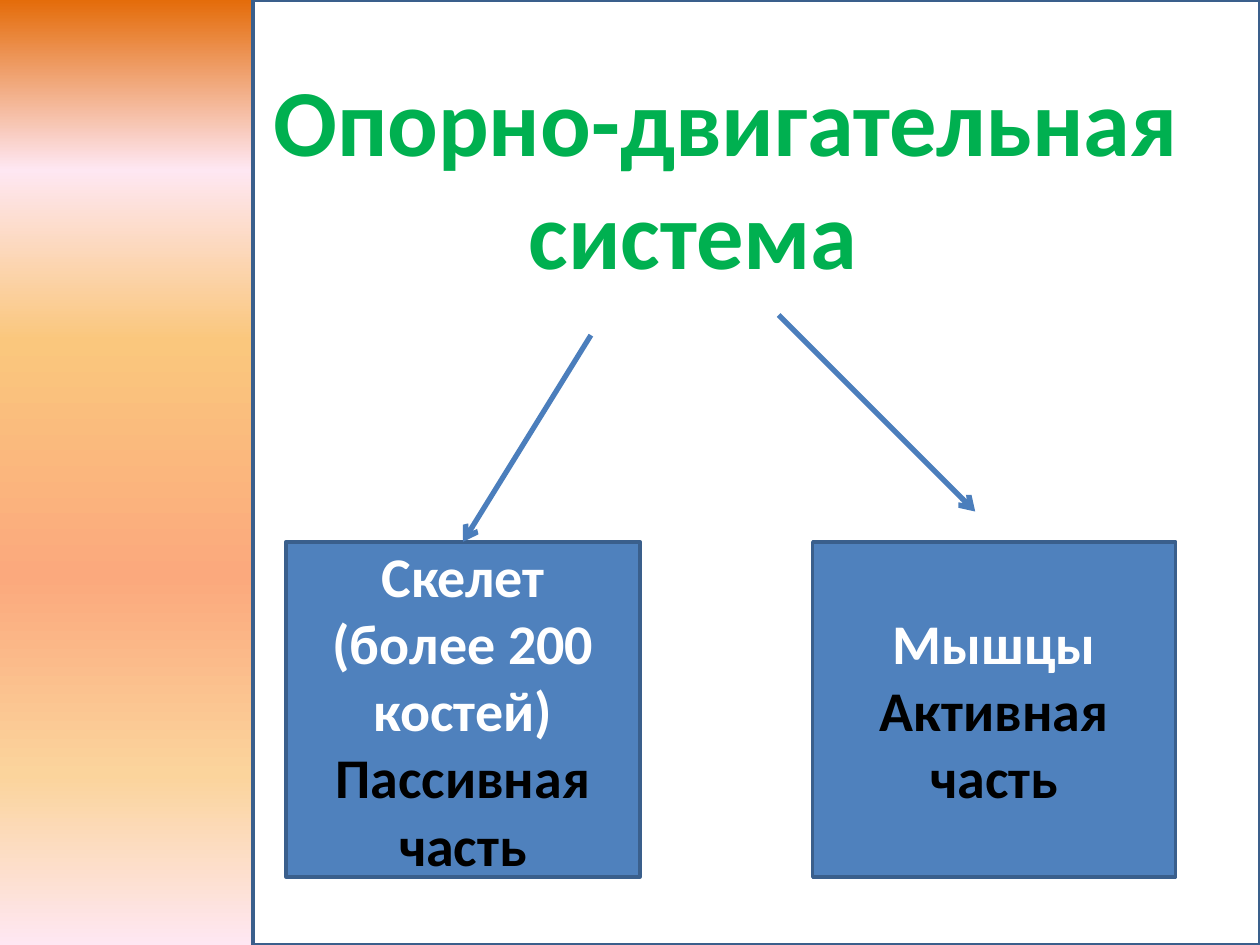
from dataclasses import dataclass

from lxml import etree
from pptx import Presentation
from pptx.dml.color import RGBColor
from pptx.enum.shapes import MSO_CONNECTOR, MSO_SHAPE
from pptx.enum.text import MSO_ANCHOR, PP_ALIGN
from pptx.oxml.ns import qn
from pptx.util import Inches, Pt

RECT = MSO_SHAPE.RECTANGLE
STRAIGHT = MSO_CONNECTOR.STRAIGHT
CENTER = PP_ALIGN.CENTER
MIDDLE = MSO_ANCHOR.MIDDLE
TOP_SIDE = 0

FONT = "Calibri"
COLORS = {
    "white": "FFFFFF",
    "black": "000000",
    "title": "00B050",
    "box": "4F81BD",
    "outline": "3A5F8C",
    "arrow": "4B7EBC",
}
BACKGROUND_STOPS = [
    (0, "E46C0A"), (18, "FEE7F2"), (36, "FAC77D"),
    (61, "FBA97D"), (82, "FBD49C"), (100, "FEE7F2"),
]
BOX_TOP, BOX_HEIGHT = 4.3, 2.66


@dataclass
class Part:
    left: float
    width: float
    name: str
    role: str
    arrow_start: tuple[float, float]
    arrow_end: tuple[float, float]
    joined: bool


PARTS = [
    Part(2.27, 2.81, "Скелет (более 200 костей)", "Пассивная часть",
         (4.69, 2.66), (3.67, BOX_TOP), True),
    Part(6.45, 2.88, "Мышцы", "Активная часть",
         (6.18, 2.5), (7.74, 4.06), False),
]


def rgb(name: str) -> RGBColor:
    return RGBColor.from_string(COLORS[name])


def paint_background(s) -> None:
    """Fill the slide from top to bottom with the many-stop gradient."""
    fill = s.background.fill
    fill.gradient()
    fill.gradient_angle = 270
    stops = next(s.background._cSld.iter(qn("a:gsLst")))
    for gs in list(stops):
        stops.remove(gs)
    for percent, color in BACKGROUND_STOPS:
        gs = etree.SubElement(stops, qn("a:gs"), pos=str(percent * 1000))
        etree.SubElement(gs, qn("a:srgbClr"), val=color)


def add_rect(s, left: float, top: float, width: float, height: float, fill: str):
    sp = s.shapes.add_shape(RECT, Inches(left), Inches(top), Inches(width), Inches(height))
    sp.shadow.inherit = False
    sp.fill.solid()
    sp.fill.fore_color.rgb = rgb(fill)
    sp.line.color.rgb = rgb("outline")
    sp.line.width = Pt(2)
    return sp


def style(p, size: int, color: str) -> None:
    for r in p.runs:
        r.font.name = FONT
        r.font.size = Pt(size)
        r.font.bold = True
        r.font.color.rgb = rgb(color)


def add_title(s) -> None:
    sp = s.shapes.add_textbox(Inches(2.07), Inches(0.44), Inches(7.93), Inches(1.92))
    tf = sp.text_frame
    tf.word_wrap = True
    tf.text = "Опорно-двигательная\nсистема"
    for p in tf.paragraphs:
        style(p, 54, "title")
    pPr = tf.paragraphs[1]._p.get_or_add_pPr()
    pPr.set("marL", str(Inches(2.03)))
    pPr.set("indent", "0")


def add_part(s, part: Part) -> None:
    """Draw one part's box and the arrow leading to it."""
    sp = add_rect(s, part.left, BOX_TOP, part.width, BOX_HEIGHT, "box")
    tf = sp.text_frame
    tf.word_wrap = True
    tf.vertical_anchor = MIDDLE
    tf.text = f"{part.name}\n{part.role}"
    for p, color in zip(tf.paragraphs, ("white", "black")):
        p.alignment = CENTER
        style(p, 32, color)

    points = [Inches(v) for v in part.arrow_start + part.arrow_end]
    arrow = s.shapes.add_connector(STRAIGHT, *points)
    if part.joined:
        arrow.end_connect(sp, TOP_SIDE)
    arrow.line.color.rgb = rgb("arrow")
    arrow.line.width = Pt(3)
    etree.SubElement(arrow.line._get_or_add_ln(), qn("a:tailEnd"), type="arrow")
    etree.SubElement(arrow._element.spPr, qn("a:effectLst"))


def main() -> None:
    prs = Presentation()
    prs.slide_width, prs.slide_height = Inches(10), Inches(7.5)
    s = prs.slides.add_slide(prs.slide_layouts[6])
    paint_background(s)
    add_rect(s, 2.01, 0, 7.99, 7.5, "white")
    add_title(s)
    for part in PARTS:
        add_part(s, part)
    prs.save("out.pptx")


if __name__ == "__main__":
    main()
